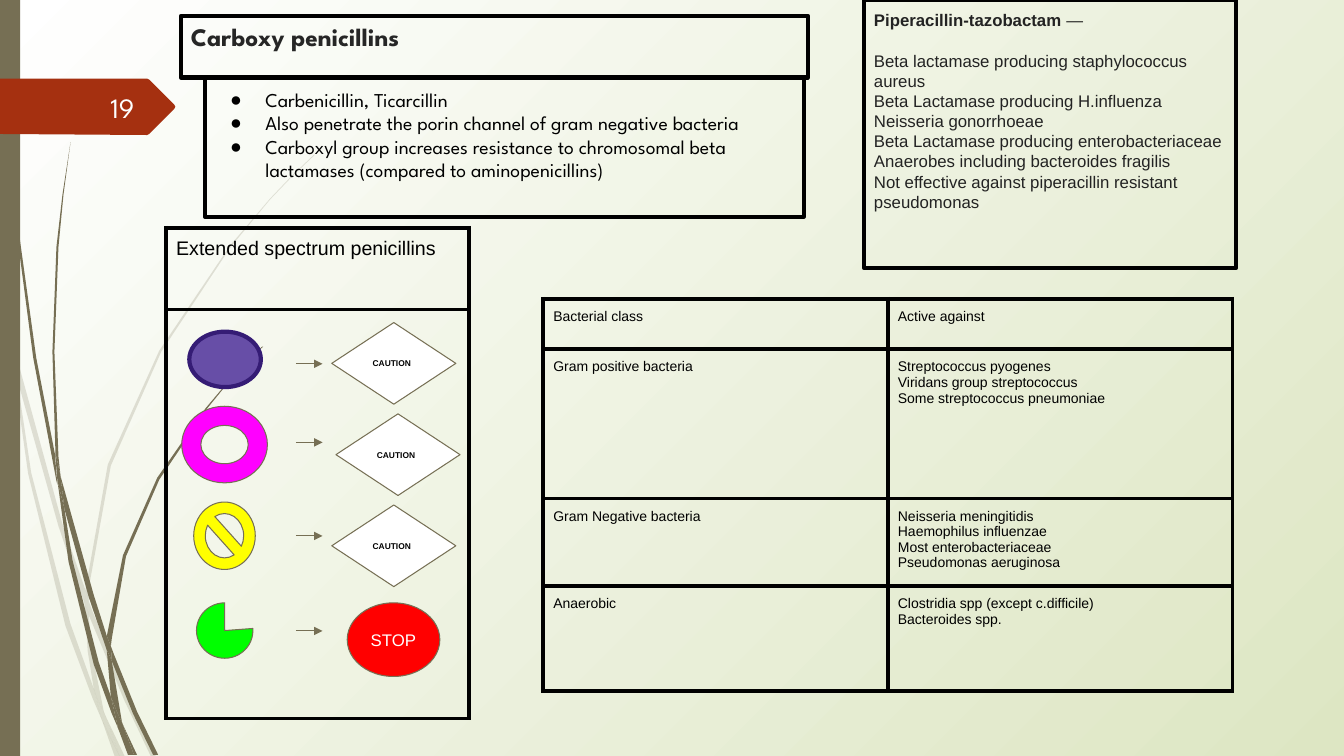
import pptx
import pptx.util
import pptx.dml.color
import pptx.enum.shapes
import pptx.enum.text
import pptx.oxml
import pptx.oxml.ns

Pt = pptx.util.Pt
SHAPE = pptx.enum.shapes.MSO_SHAPE
ANCHOR = pptx.enum.text.MSO_ANCHOR
ALIGN = pptx.enum.text.PP_ALIGN
qn = pptx.oxml.ns.qn

# Content
COLORS = {"black": "000000", "white": "FFFFFF", "page": "DDE6C3", "olive": "766F54",
          "rust": "A53010", "number": "FEFFFF", "title": "262626", "ink": "232323",
          "red": "FF0000", "yellow": "FFFF00", "green": "00FF00", "magenta": "FF00FF",
          "purple": "674EA7", "indigo": "351C75"}
TITLE = "Carboxy penicillins"
BULLETS = ["Carbenicillin, Ticarcillin",
           "Also penetrate the porin channel of gram negative bacteria",
           "Carboxyl group increases resistance to chromosomal beta lactamases "
           "(compared to aminopenicillins)"]
COMBINATION = "Piperacillin-tazobactam"
COVERAGE = ["Beta lactamase producing staphylococcus aureus",
            "Beta Lactamase producing H.influenza",
            "Neisseria gonorrhoeae",
            "Beta Lactamase producing enterobacteriaceae",
            "Anaerobes including bacteroides fragilis",
            "Not effective against piperacillin resistant pseudomonas"]
SPECTRUM = [["Bacterial class", "Active against"],
            ["Gram positive bacteria", "Streptococcus pyogenes\nViridans group streptococcus\n"
             "Some streptococcus pneumoniae"],
            ["Gram Negative bacteria", "Neisseria meningitidis\nHaemophilus influenzae\n"
             "Most enterobacteriaceae\nPseudomonas aeruginosa"],
            ["Anaerobic", "Clostridia spp (except c.difficile)\nBacteroides spp."]]
EXTENDED = [["Extended spectrum penicillins"], [""]]

# Symbols: shape, box, fill, line, line width, adjustments
SYMBOLS = [
    (SHAPE.NO_SYMBOL, (138.4, 358.6, 44, 48.2), "yellow", "olive", 0.75, [0.188]),
    (SHAPE.PIE, (140.4, 430.6, 40.3, 39.6), "green", "olive", 0.75, [355.75 * 0.6, 270 * 0.6]),
    (SHAPE.OVAL, (135.2, 236.9, 51.1, 39.6), "purple", "indigo", 3, []),
    (SHAPE.DONUT, (129.8, 290.2, 61.2, 54.7), "magenta", "olive", 0.75, [0.25])]
ARROW_TOPS = [259.9, 316, 382.8, 450.7]
CAUTION_CORNERS = [(237, 230.4), (240, 295.6), (237, 360.7)]

# Outlines, on a grid of 0.72 points
GRID = 0.72
TAG = [(0, 78), (146, 78), (148, 79), (173, 104), (174, 106), (173, 108), (148, 133),
       (146, 134), (0, 133)]
PALE_BLADES = [
    [(11, 350), (9, 322), (0, 282), (0, 299), (10, 344)],
    [(58, 522), (84, 599), (85, 586), (62, 520), (14, 345), (17, 376)],
    [(92, 607), (88, 596), (88, 610), (123, 694), (150, 751), (155, 751), (127, 692)],
    [(119, 751), (124, 751), (105, 711)],
    [(93, 683), (70, 619), (31, 469), (17, 376), (11, 350), (28, 470), (65, 621), (92, 693),
     (101, 714), (99, 707)],
    [(84, 599), (87, 646), (93, 683), (96, 692), (105, 711), (103, 706), (91, 646), (88, 610),
     (88, 608)],
    [(88, 584), (110, 462), (160, 349), (229, 245), (268, 198), (290, 175), (312, 154),
     (312, 153), (289, 175), (268, 197), (228, 244), (158, 348), (107, 461), (85, 584),
     (85, 586), (88, 596)],
    [(101, 714), (114, 751), (119, 751)],
    [(88, 608), (88, 610), (88, 596), (85, 586), (84, 599)],
    [(96, 692), (93, 683), (99, 707), (101, 714), (119, 751), (105, 711)]]
DARK_BLADES = [
    [(7, 110), (17, 233), (33, 355), (56, 477), (57, 481), (55, 457), (55, 453), (36, 355),
     (19, 232), (8, 109), (5, 48), (4, 0), (3, 0), (4, 48)],
    [(88, 592), (106, 645), (106, 633), (106, 631), (93, 590), (60, 472), (64, 505)],
    [(113, 649), (110, 641), (111, 656), (132, 708), (152, 749), (157, 749), (136, 706)],
    [(110, 691), (98, 657), (72, 556), (64, 505), (57, 477), (68, 557), (93, 659), (111, 708),
     (117, 722), (116, 717)],
    [(60, 472), (58, 453), (54, 349), (58, 245), (63, 193), (70, 141), (62, 193), (56, 245),
     (52, 349), (55, 449)],
    [(133, 749), (136, 749), (122, 719)],
    [(57, 477), (64, 505), (60, 472), (55, 449), (55, 453)],
    [(111, 633), (125, 552), (158, 476), (205, 406), (231, 374), (245, 359), (261, 344),
     (260, 344), (245, 358), (231, 373), (204, 405), (156, 474), (122, 551), (106, 631),
     (110, 641)],
    [(117, 722), (127, 749), (131, 749)],
    [(106, 645), (110, 691), (116, 706), (122, 719), (121, 716), (111, 656), (109, 651)],
    [(106, 645), (109, 651), (111, 656), (110, 641), (106, 631), (106, 633)],
    [(116, 706), (110, 691), (116, 717), (117, 722), (130, 749), (133, 749), (122, 719)]]


def rgb(name):
    return pptx.dml.color.RGBColor.from_string(COLORS[name])


def add_xml(parent, tag, **attributes):
    child = parent.makeelement(qn(tag), attributes)
    parent.append(child)
    return child


def assign(target, values):
    for name, value in values.items():
        setattr(target, name, value)


def place(shape, box):
    assign(shape, dict(zip(("left", "top", "width", "height"), map(Pt, box))))


def paint(shape, fill=None, line=None, width=0.75):
    shape.shadow.inherit = False
    for part, name in ((shape.fill, fill), (shape.line.fill, line)):
        if name:
            part.solid()
            part.fore_color.rgb = rgb(name)
        else:
            part.background()
    if line:
        shape.line.width = Pt(width)


def write(frame, lines, size, color, font="Arial", bold=False, align=ALIGN.LEFT):
    frame.text = "\n".join(lines)
    for paragraph in frame.paragraphs:
        assign(paragraph, {"alignment": align, "space_before": Pt(0)})
        for run in paragraph.runs:
            assign(run.font, {"size": Pt(size), "name": font, "bold": bold})
            run.font.color.rgb = rgb(color)


def set_frame(frame, vertical=7.2, anchor=ANCHOR.TOP):
    assign(frame, {"margin_left": Pt(7.2), "margin_right": Pt(7.2), "margin_top": Pt(vertical),
                   "margin_bottom": Pt(vertical), "word_wrap": True, "vertical_anchor": anchor,
                   "auto_size": pptx.enum.text.MSO_AUTO_SIZE.NONE})


def add_shape(slide, kind, box, fill=None, line=None, width=0.75):
    shape = slide.shapes.add_shape(kind, *map(Pt, box))
    paint(shape, fill, line, width)
    set_frame(shape.text_frame, anchor=ANCHOR.MIDDLE)
    return shape


def add_outline(slide, points, color, alpha=100):
    corners = [(Pt(x * GRID), Pt(y * GRID)) for x, y in points]
    builder = slide.shapes.build_freeform(*corners[0], scale=1.0)
    builder.add_line_segments(corners[1:], close=True)
    outline = builder.convert_to_shape()
    paint(outline, color)
    if alpha < 100:
        add_xml(outline.element.spPr.find(".//" + qn("a:srgbClr")), "a:alpha",
                val=str(alpha * 1000))


def add_table(slide, corner, widths, heights, rows, size):
    shape = slide.shapes.add_table(len(rows), len(widths), *map(Pt, corner),
                                   Pt(sum(widths)), Pt(sum(heights)))
    table = shape.table
    assign(table, {"first_row": False, "horz_banding": False})
    for column, width in zip(table.columns, widths):
        column.width = Pt(width)
    for row, height, texts in zip(table.rows, heights, rows):
        row.height = Pt(height)
        for cell, text in zip(row.cells, texts):
            write(cell.text_frame, text.split("\n"), size, "black")
            assign(cell, dict.fromkeys(
                ("margin_left", "margin_right", "margin_top", "margin_bottom"), Pt(7.2)))
            properties = cell._tc.get_or_add_tcPr()
            for side in ("a:lnL", "a:lnR", "a:lnT", "a:lnB"):
                border = add_xml(properties, side, w=str(Pt(3)))
                add_xml(add_xml(border, "a:solidFill"), "a:srgbClr", val=COLORS["black"])
            cell.fill.background()


def main():
    presentation = pptx.Presentation()
    assign(presentation, {"slide_width": Pt(960), "slide_height": Pt(540)})
    slide = presentation.slides.add_slide(presentation.slide_layouts[1])
    title, body = slide.placeholders

    # Background gradient from the top left corner
    fill = slide.background.fill
    fill.gradient()
    for stop, name in zip(fill.gradient_stops, ("white", "page")):
        stop.color.rgb = rgb(name)
    gradient = slide.element.find(".//" + qn("a:gradFill"))
    gradient.remove(gradient.find(qn("a:lin")))
    add_xml(add_xml(gradient, "a:path", path="circle"), "a:fillToRect", r="100000", b="100000")

    # Grass blades, side bar and page number
    for blades, alpha in ((PALE_BLADES, 20), (DARK_BLADES, 100)):
        for points in blades:
            add_outline(slide, points, "olive", alpha)
    add_shape(slide, SHAPE.RECTANGLE, (0, 0, 14.4, 540), "olive")
    add_outline(slide, TAG, "rust")
    number = slide.shapes.add_textbox(*map(Pt, (41.8, 61.9, 61.2, 28.8)))
    set_frame(number.text_frame, 3.6, ANCHOR.MIDDLE)
    write(number.text_frame, ["19"], 20, "number", "League Spartan", align=ALIGN.RIGHT)

    # Title and bullets, in front of the blades
    for shape, box, inset in ((title, (129.2, 11.3, 447.8, 44.1), 3.6),
                              (body, (146.4, 55.4, 427.7, 99.4), 7.2)):
        shape.element.getparent().append(shape.element)
        place(shape, box)
        shape.line.color.rgb = rgb("black")
        shape.line.width = Pt(3)
        set_frame(shape.text_frame, inset)
    write(title.text_frame, [TITLE], 18, "title", "League Spartan", True)
    write(body.text_frame, BULLETS, 14, "black", "League Spartan")
    for paragraph in body.text_frame.paragraphs:
        properties = paragraph._p.get_or_add_pPr()
        properties.set("marL", str(Pt(36)))
        properties.set("indent", str(Pt(-25.2)))
        add_xml(add_xml(properties, "a:buClr"), "a:srgbClr", val=COLORS["black"])
        add_xml(properties, "a:buChar", char="●")

    # Tables
    add_table(slide, (388, 213.4), [246.2] * 2, [36, 106.6, 62.6, 74.9], SPECTRUM, 10)
    add_table(slide, (118.6, 162.7), [216.5], [58.3, 292.3], EXTENDED, 14)

    # Symbols, arrows and signs
    for kind, box, fill_name, line, width, adjustments in SYMBOLS:
        symbol = add_shape(slide, kind, box, fill_name, line, width)
        for index, value in enumerate(adjustments):
            symbol.adjustments[index] = value
    for top in ARROW_TOPS:
        arrow = slide.shapes.add_connector(pptx.enum.shapes.MSO_CONNECTOR.STRAIGHT,
                                           *map(Pt, (211.3, top, 230.4, top)))
        arrow.line.color.rgb = rgb("olive")
        arrow.line.width = Pt(0.75)
        add_xml(arrow.line._get_or_add_ln(), "a:tailEnd", type="triangle")
        add_xml(arrow.element.spPr, "a:effectLst")
    for corner in CAUTION_CORNERS:
        sign = add_shape(slide, SHAPE.DIAMOND, (*corner, 88.6, 58.3), "white", "olive")
        write(sign.text_frame, ["CAUTION"], 6, "black", bold=True)
    stop_sign = add_shape(slide, SHAPE.OVAL, (248, 430.6, 66.2, 52.6), "red", "olive")
    write(stop_sign.text_frame, ["STOP"], 12, "white")

    # Combination panel
    panel = add_shape(slide, SHAPE.RECTANGLE, (617.2, 0, 265.7, 191.5), None, "black", 3)
    set_frame(panel.text_frame)
    write(panel.text_frame, [COMBINATION, *COVERAGE], 12, "ink")
    heading = panel.text_frame.paragraphs[0]
    heading.space_after = Pt(14.4)
    heading.runs[0].font.bold = True
    dash = heading.add_run()
    dash.text = " —"
    assign(dash.font, {"size": Pt(12), "name": "Arial", "bold": False})
    dash.font.color.rgb = rgb("ink")

    presentation.save("out.pptx")


if __name__ == "__main__":
    main()
